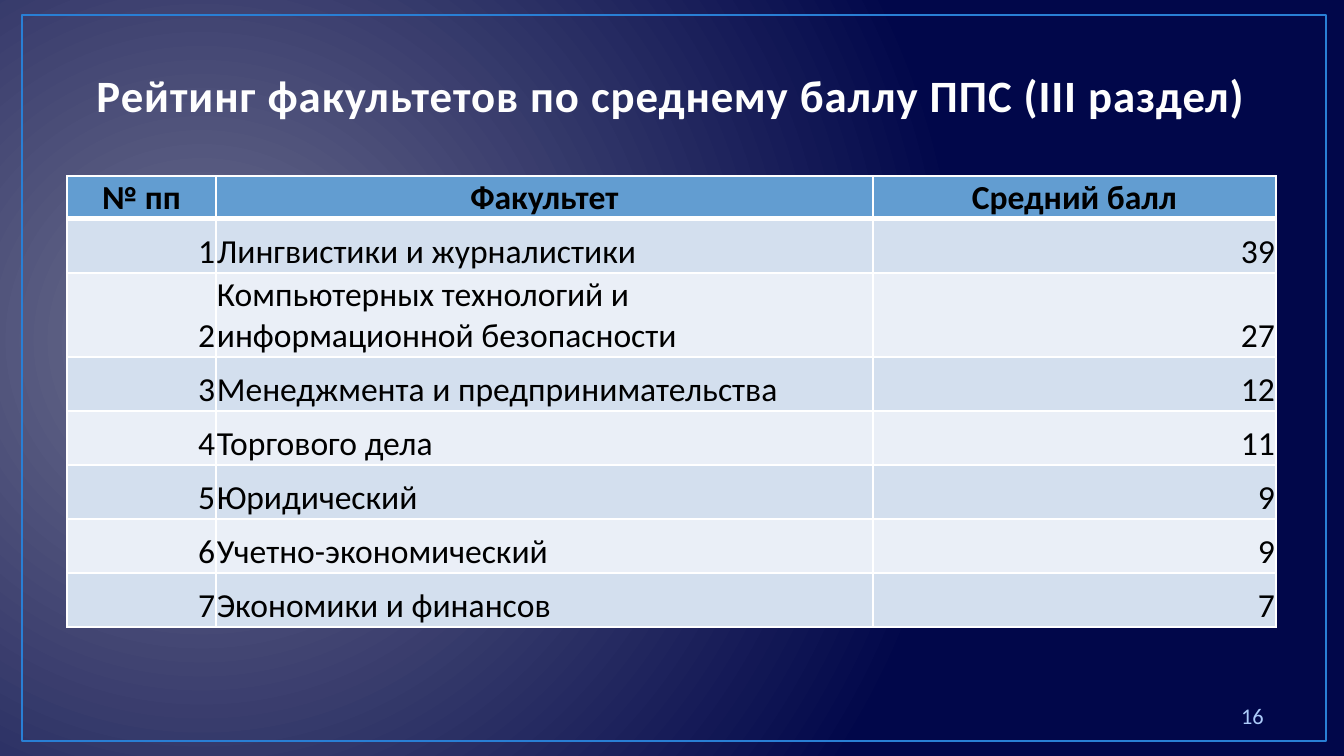
from lxml import etree
from pptx import Presentation
from pptx import util as u
from pptx.dml.color import RGBColor
from pptx.enum import shapes, text
from pptx.oxml.ns import qn

EMU_PER_PX = 914400 / 134.4
FONT = "Calibri"
GLOW = RGBColor(0x6E, 0x70, 0x8E)
NAVY = RGBColor(0x01, 0x07, 0x4A)
FRAME_BLUE = RGBColor(0x29, 0x7F, 0xD5)
TITLE_WHITE = RGBColor(0xFE, 0xFE, 0xFE)
TITLE_OUTLINE = RGBColor(0x23, 0x4F, 0x77)
PAGE_BLUE = RGBColor(0xAC, 0xCB, 0xF9)
HEADER_BLUE = RGBColor(0x62, 0x9D, 0xD1)
BANDS = (RGBColor(0xD3, 0xDF, 0xEE), RGBColor(0xEA, 0xEF, 0xF7))
WHITE = RGBColor(0xFF, 0xFF, 0xFF)
BLACK = RGBColor(0, 0, 0)
LEFT, CENTER, RIGHT = text.PP_ALIGN.LEFT, text.PP_ALIGN.CENTER, text.PP_ALIGN.RIGHT

HEADINGS = ("№ пп", "Факультет", "Средний балл")
RATING = (
    ("Лингвистики и журналистики", 39),
    ("Компьютерных технологий и информационной безопасности", 27),
    ("Менеджмента и предпринимательства", 12),
    ("Торгового дела", 11),
    ("Юридический", 9),
    ("Учетно-экономический", 9),
    ("Экономики и финансов", 7),
)
COLUMN_WIDTHS = (149, 657, 403)
ROW_HEIGHTS = (43, 54, 84, 54, 54, 54, 54, 54)


def px(length):
    return u.Emu(round(length * EMU_PER_PX))


def write(paragraph, words, size, color, align, bold=False):
    paragraph.alignment = align
    run = paragraph.add_run()
    run.text = words
    run.font.name = FONT
    run.font.size = u.Pt(size)
    run.font.bold = bold
    run.font.color.rgb = color
    return run


def make_line(tag, points, color):
    line = etree.Element(qn(tag), w=str(u.Pt(points)))
    fill = etree.SubElement(line, qn("a:solidFill"))
    etree.SubElement(fill, qn("a:srgbClr"), val=str(color))
    return line


def paint_background(slide):
    fill = slide.background.fill
    fill.gradient()
    for stop, color, position in zip(fill.gradient_stops, (GLOW, NAVY), (0, 1)):
        stop.color.rgb = color
        stop.position = position
    gradient = slide.element.find(".//" + qn("a:gradFill"))
    gradient.remove(gradient.find(qn("a:lin")))
    circle = etree.SubElement(gradient, qn("a:path"), path="circle")
    etree.SubElement(circle, qn("a:fillToRect"),
                     l="15000", t="50000", r="85000", b="60000")


def add_frame(slide):
    frame = slide.shapes.add_shape(shapes.MSO_SHAPE.RECTANGLE,
                                   px(22), px(15), px(1304), px(726))
    frame.shadow.inherit = False
    frame.fill.background()
    frame.line.color.rgb = FRAME_BLUE
    frame.line.width = u.Pt(1.5)


def set_title(slide, words):
    title = slide.shapes.title
    title.left, title.top, title.width, title.height = px(67), px(60), px(1208), px(64)
    body = title.text_frame
    body.auto_size = text.MSO_AUTO_SIZE.NONE
    body.vertical_anchor = text.MSO_ANCHOR.BOTTOM
    body.margin_top = body.margin_bottom = px(3)
    run = write(body.paragraphs[0], words, 24, TITLE_WHITE, CENTER, bold=True)
    properties = run.font._element
    properties.set("spc", "50")
    properties.insert(0, make_line("a:ln", 1.05, TITLE_OUTLINE))


def fill_cell(cell, words, align, fill, top=1, bottom=1, bold=False):
    cell.margin_left = cell.margin_right = cell.margin_top = px(1)
    cell.margin_bottom = 0
    cell.vertical_anchor = text.MSO_ANCHOR.BOTTOM
    cell.fill.solid()
    cell.fill.fore_color.rgb = fill
    write(cell.text_frame.paragraphs[0], words, 18, BLACK, align, bold)
    properties = cell._tc.get_or_add_tcPr()
    borders = (("a:lnL", 1), ("a:lnR", 1), ("a:lnT", top), ("a:lnB", bottom))
    for place, (tag, points) in enumerate(borders):
        properties.insert(place, make_line(tag, points, WHITE))


def add_rating(slide):
    table = slide.shapes.add_table(len(ROW_HEIGHTS), len(COLUMN_WIDTHS), px(67), px(176),
                                   px(sum(COLUMN_WIDTHS)), px(sum(ROW_HEIGHTS))).table
    for column, width in zip(table.columns, COLUMN_WIDTHS):
        column.width = px(width)
    for row, height in zip(table.rows, ROW_HEIGHTS):
        row.height = px(height)
    for column, heading in enumerate(HEADINGS):
        fill_cell(table.cell(0, column), heading, CENTER, HEADER_BLUE, bottom=3, bold=True)
    for place, (faculty, score) in enumerate(RATING, start=1):
        entries = ((str(place), RIGHT), (faculty, LEFT), (str(score), RIGHT))
        for column, (words, align) in enumerate(entries):
            fill_cell(table.cell(place, column), words, align, BANDS[(place - 1) % 2],
                      top=3 if place == 1 else 1)


def add_page_number(slide, number):
    page = slide.shapes.add_textbox(px(964), px(696), px(313), px(40)).text_frame
    page.word_wrap = True
    page.vertical_anchor = text.MSO_ANCHOR.MIDDLE
    write(page.paragraphs[0], number, 12, PAGE_BLUE, RIGHT)


def main():
    deck = Presentation()
    deck.slide_width, deck.slide_height = px(1344), px(756)
    slide = deck.slides.add_slide(deck.slide_layouts[5])
    paint_background(slide)
    add_frame(slide)
    set_title(slide, "Рейтинг факультетов по среднему баллу ППС (III раздел)")
    add_rating(slide)
    add_page_number(slide, "16")
    deck.save("out.pptx")


if __name__ == "__main__":
    main()
